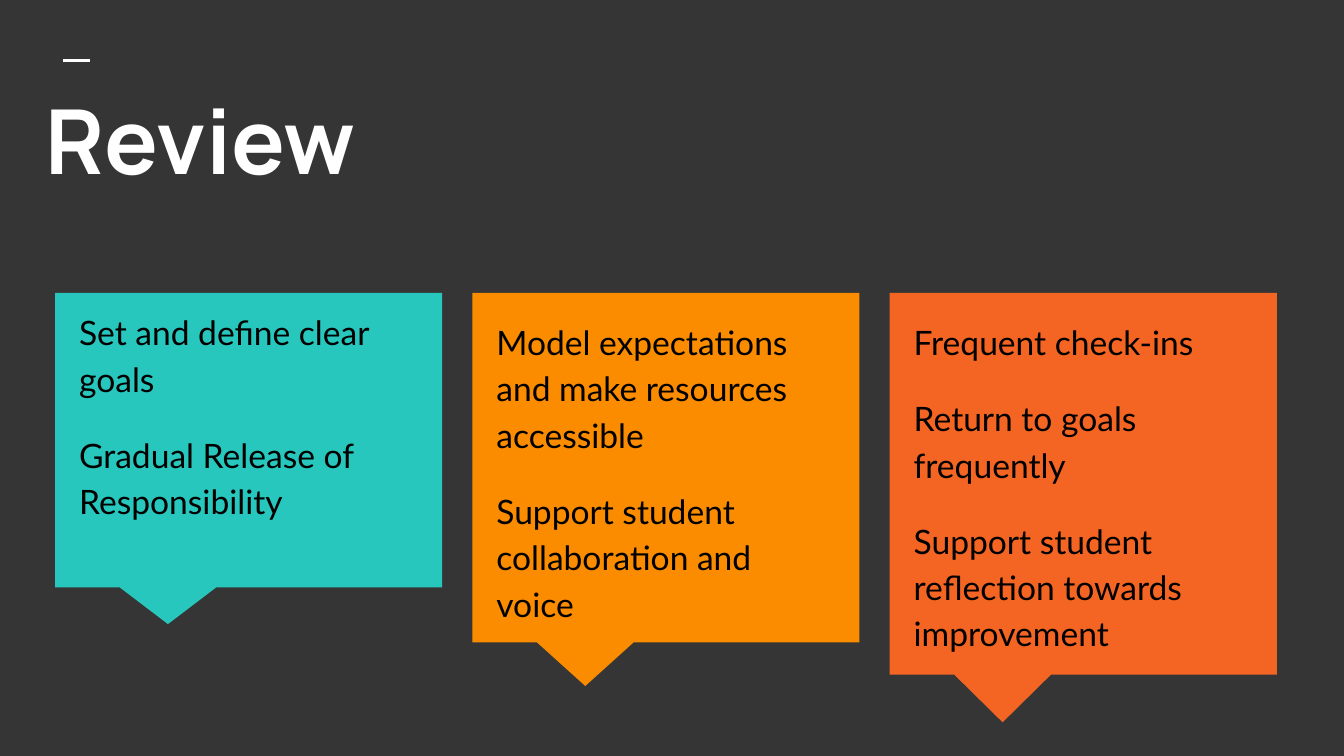
from dataclasses import dataclass

from pptx import Presentation
from pptx.dml.color import RGBColor
from pptx.enum.shapes import MSO_CONNECTOR, MSO_SHAPE
from pptx.enum.text import MSO_ANCHOR
from pptx.oxml.ns import qn
from pptx.slide import Slide
from pptx.util import Inches, Pt
from lxml.etree import SubElement

# 16:9 slide
WIDTH = 10
HEIGHT = WIDTH * 9 / 16
COLORS = {
    "background": "353535",
    "title": "FFFFFF",
    "body": "000000",
    "teal": "27C7BD",
    "amber": "FB8C00",
    "orange": "F46524",
}

# Callout grid: three equal columns hanging from one top edge
LEFT, LAST_LEFT, TOP = 0.41, 6.62, 2.18
COLUMN_WIDTH = 2.88
COLUMN_STEP = (LAST_LEFT - LEFT) / 2
TIP_X, TIP_Y = -5 / 24, 5 / 8
TEXT_INDENT, TEXT_WIDTH = 0.08, 2.71
INSET = 0.1


@dataclass
class Callout:
    color: str
    height: float
    text_drop: float
    text_height: float
    paragraphs: list[str]


CALLOUTS = [
    Callout("teal", 2.19, 0, 2.53, [
        "Set and define clear goals",
        "Gradual Release of Responsibility",
    ]),
    Callout("amber", 2.6, 0.07, 2.19, [
        "Model expectations and make resources accessible",
        "Support student collaboration and voice",
    ]),
    Callout("orange", 2.84, 0.07, 2.19, [
        "Frequent check-ins",
        "Return to goals frequently",
        "Support student reflection towards improvement",
    ]),
]


def rgb(name: str) -> RGBColor:
    return RGBColor.from_string(COLORS[name])


def add_text(s: Slide, box: tuple[float, ...], paragraphs: list[str], font: str,
             size: int, color: str, bold: bool = False,
             line_spacing: float = 1.0, gap: int = 0) -> None:
    tf = s.shapes.add_textbox(*map(Inches, box)).text_frame
    tf.word_wrap = True
    tf.vertical_anchor = MSO_ANCHOR.TOP
    tf.margin_left = tf.margin_right = Inches(INSET)
    tf.margin_top = tf.margin_bottom = Inches(INSET)
    tf.text = "\n".join(paragraphs)
    for i, p in enumerate(tf.paragraphs):
        p.line_spacing = line_spacing
        p.space_before = Pt(gap if i else 0)
        for r in p.runs:
            r.font.name = font
            r.font.size = Pt(size)
            r.font.bold = bold
            r.font.color.rgb = rgb(color)


def add_callout(s: Slide, column: int, callout: Callout) -> None:
    sp = s.shapes.add_shape(
        MSO_SHAPE.RECTANGULAR_CALLOUT,
        Inches(LEFT + column * COLUMN_STEP), Inches(TOP),
        Inches(COLUMN_WIDTH), Inches(callout.height))
    sp.adjustments[0], sp.adjustments[1] = TIP_X, TIP_Y
    sp.shadow.inherit = False
    sp.fill.solid()
    sp.fill.fore_color.rgb = rgb(callout.color)
    sp.line.fill.background()


def add_callout_text(s: Slide, column: int, callout: Callout) -> None:
    box = (LEFT + column * COLUMN_STEP + TEXT_INDENT, TOP + callout.text_drop,
           TEXT_WIDTH, callout.text_height)
    add_text(s, box, callout.paragraphs, "Lato", 18, "body",
             line_spacing=1.15, gap=16)


def add_dash(s: Slide, left: float, top: float, length: float) -> None:
    dash = s.shapes.add_connector(
        MSO_CONNECTOR.STRAIGHT, Inches(left), Inches(top),
        Inches(left + length), Inches(top))
    dash.line.color.rgb = rgb("title")
    dash.line.width = Pt(1.5)
    SubElement(dash._element.spPr, qn("a:effectLst"))


def main() -> None:
    prs = Presentation()
    prs.slide_width, prs.slide_height = Inches(WIDTH), Inches(HEIGHT)
    s = prs.slides.add_slide(prs.slide_layouts[6])
    s.background.fill.solid()
    s.background.fill.fore_color.rgb = rgb("background")

    # Heading with its accent dash
    add_dash(s, 0.47, 0.45, 0.2)
    add_text(s, (0.24, 0.53, 9.43, 1.12), ["Review"], "Manrope", 48, "title", bold=True)

    # Callouts, then their text on top
    for column, callout in enumerate(CALLOUTS):
        add_callout(s, column, callout)
    for column, callout in enumerate(CALLOUTS):
        add_callout_text(s, column, callout)

    prs.save("out.pptx")


if __name__ == "__main__":
    main()
